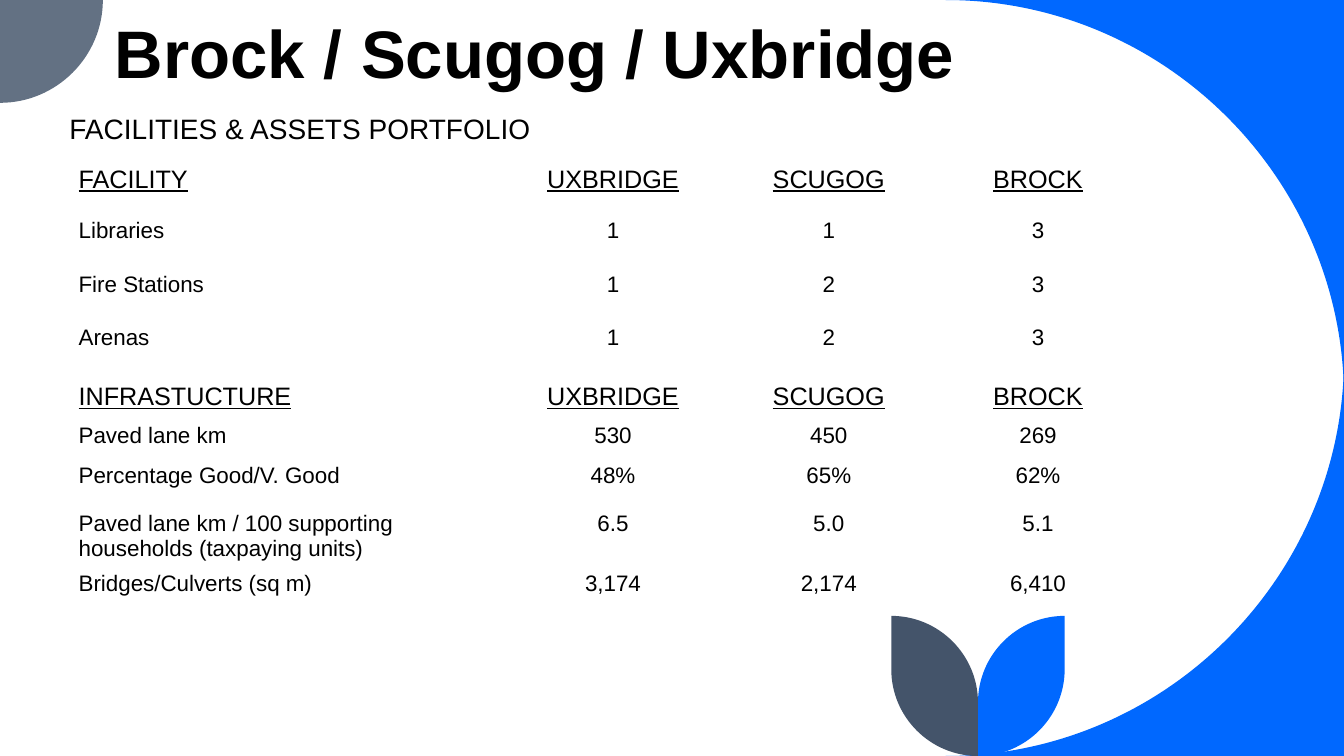
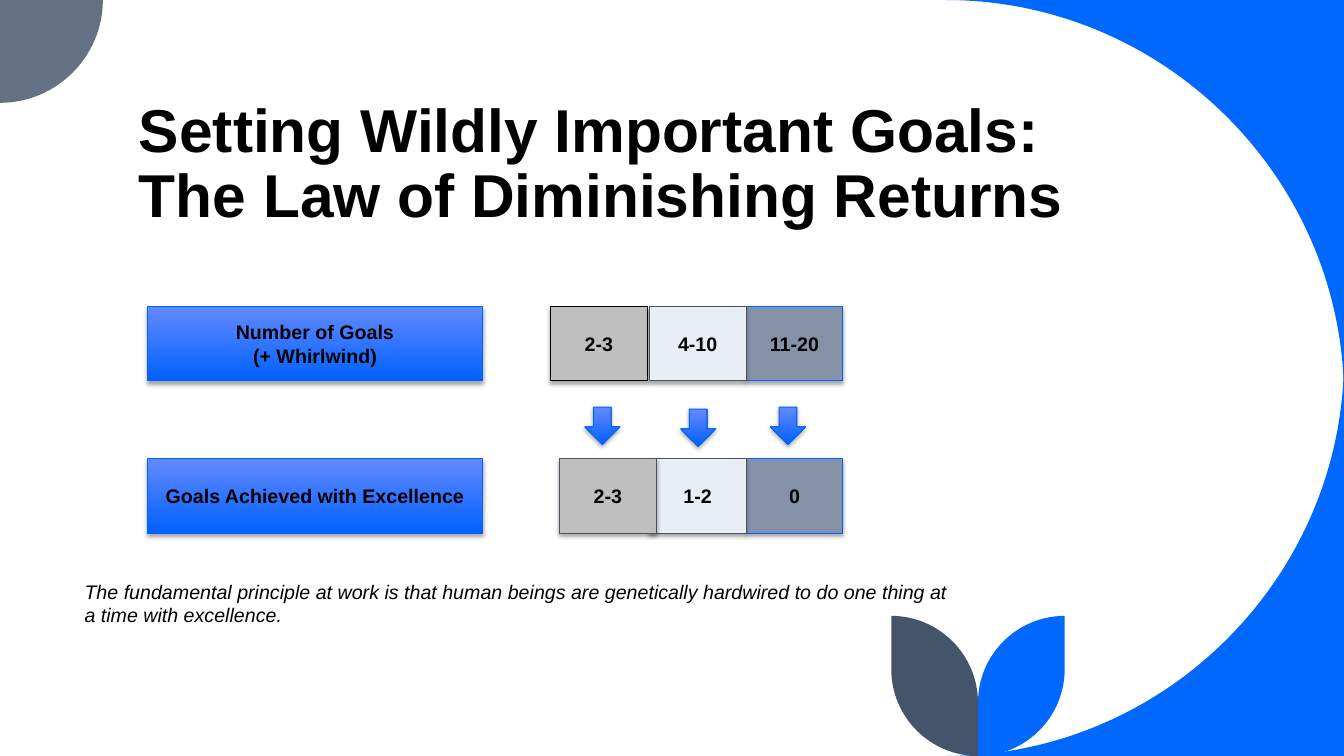
from dataclasses import dataclass

from lxml.etree import SubElement
from pptx import Presentation
from pptx.dml.color import RGBColor
from pptx.enum.shapes import MSO_SHAPE
from pptx.enum.text import MSO_ANCHOR, PP_ALIGN
from pptx.oxml.ns import qn
from pptx.util import Inches, Pt


@dataclass(frozen=True)
class Theme:
    font: str = "Arial"
    text: str = "000000"
    blue: str = "0068FF"
    slate: str = "637183"
    navy: str = "44546A"
    gradient: tuple = ("0060FF", "638AFF")
    outline: str = "0063FF"
    light_outline: str = "4A5462"
    silver: str = "BFBFBF"
    mist: str = "E8EEF4"
    steel: str = "8491A7"
    title_size: float = 48
    long_title_size: float = 43.2
    subtitle_size: float = 20
    header_size: float = 18
    cell_size: float = 16
    label_size: float = 14


THEME = Theme()
WIDTH, HEIGHT = 13.33, 7.5
ROUNDNESS = 0.55


def color(value):
    return RGBColor.from_string(value)


def write_text(frame, text, *, size, bold=False, italic=False, underline=False,
               align=PP_ALIGN.LEFT, anchor=MSO_ANCHOR.TOP, spacing=None):
    frame.word_wrap = True
    frame.vertical_anchor = anchor
    for index, line in enumerate(text.split("\n")):
        paragraph = frame.paragraphs[0] if index == 0 else frame.add_paragraph()
        paragraph.text = line
        paragraph.alignment = align
        paragraph.line_spacing = spacing
        for run in paragraph.runs:
            font = run.font
            font.name, font.size = THEME.font, Pt(size)
            font.bold, font.italic, font.underline = bold, italic, underline
            font.color.rgb = color(THEME.text)


def add_text(slide, box, text, **text_format):
    shape = slide.shapes.add_textbox(*map(Inches, box))
    write_text(shape.text_frame, text, **text_format)


def add_title(slide, box, text, size=THEME.title_size):
    add_text(slide, box, text, size=size, bold=True, anchor=MSO_ANCHOR.BOTTOM, spacing=0.9)


def quarter(start, corner, end):
    def toward_corner(point):
        return tuple(p + (c - p) * ROUNDNESS for p, c in zip(point, corner))
    return [start, toward_corner(start), toward_corner(end), end]


def add_outline(shapes, curves, fill, corner=None):
    points = sum(curves, []) + ([corner] if corner else [])
    points = [(Inches(x), Inches(y)) for x, y in points]
    builder = shapes.build_freeform(*points[0], scale=1.0)
    builder.add_line_segments(points[1:], close=True)
    shape = builder.convert_to_shape()
    bend_lines(shape, len(curves))
    shape.shadow.inherit = False
    shape.fill.solid()
    shape.fill.fore_color.rgb = color(fill)
    shape.line.fill.background()


def bend_lines(shape, curve_count):
    lines = list(shape._element.spPr.iter(qn("a:lnTo")))
    for index in range(curve_count):
        first, *others = lines[4 * index:4 * index + 3]
        first.tag = qn("a:cubicBezTo")
        for line in others:
            first.append(line[0])
            line.getparent().remove(line)


def add_leaves(slide, center, top, radius, height):
    group = slide.shapes.add_group_shape()
    bottom = top + height
    for side, fill in ((1, THEME.blue), (-1, THEME.navy)):
        outer = center + side * radius
        add_outline(group.shapes, [
            quarter((outer, bottom - radius), (outer, bottom), (center, bottom)),
            quarter((center, top + radius), (center, top), (outer, top)),
        ], fill)


def add_decoration(slide):
    radius, small = 3.95, 1.02
    left = WIDTH - radius
    for edge, inner in ((0, radius), (HEIGHT, HEIGHT - radius)):
        corner = (WIDTH, edge)
        curve = quarter((left, edge), corner, (WIDTH, inner))
        add_outline(slide.shapes, [curve], THEME.blue, corner)
    curve = quarter((small, 0), (small, small), (0, small))
    add_outline(slide.shapes, [curve], THEME.slate, (0, 0))
    add_leaves(slide, 9.7, 6.11, 0.86, 1.39)


def add_figures(slide, left, top, heights, rows, margin_top=0, margin_bottom=0):
    columns = (4.26, 2.28, 2, 2.15)
    box = (left, top, sum(columns), sum(heights))
    table = slide.shapes.add_table(len(rows), len(columns), *map(Inches, box)).table
    table.first_row = table.horz_banding = False
    for column, width in zip(table.columns, columns):
        column.width = Inches(width)
    for row_index, (height, values) in enumerate(zip(heights, rows)):
        table.rows[row_index].height = Inches(height)
        header = row_index == 0
        for column_index, value in enumerate(values):
            cell = table.cell(row_index, column_index)
            cell.fill.background()
            cell.margin_top = Inches(margin_top)
            cell.margin_bottom = Inches(margin_bottom)
            write_text(cell.text_frame, value, underline=header,
                       size=THEME.header_size if header else THEME.cell_size,
                       align=PP_ALIGN.CENTER if column_index else PP_ALIGN.LEFT)


def add_block(slide, kind, box, fill=None, line=THEME.outline, text=""):
    shape = slide.shapes.add_shape(kind, *map(Inches, box))
    if fill:
        shape.fill.solid()
        shape.fill.fore_color.rgb = color(fill)
    else:
        shape.fill.gradient()
        shape.fill.gradient_angle = 90
        for stop, value in zip(shape.fill.gradient_stops, THEME.gradient):
            stop.color.rgb = color(value)
    shape.line.color.rgb = color(line)
    shape.line.width = Pt(0.75)
    add_shadow(shape)
    if text:
        write_text(shape.text_frame, text, size=THEME.label_size, bold=True,
                   align=PP_ALIGN.CENTER, anchor=MSO_ANCHOR.MIDDLE)


def add_shadow(shape):
    shape.shadow.inherit = False
    effects = shape._element.spPr.find(qn("a:effectLst"))
    shadow = SubElement(effects, qn("a:outerShdw"), blurRad=str(Pt(3.1)),
                        dist=str(Pt(1.8)), dir="5400000", rotWithShape="0")
    tone = SubElement(shadow, qn("a:srgbClr"), val="000000")
    SubElement(tone, qn("a:alpha"), val="35000")


def add_goal_row(slide, left, top, label, cells):
    height = 0.74
    add_block(slide, MSO_SHAPE.RECTANGLE, (left, top, 3.33, height), text=label)
    for offset, text, fill, line in cells:
        box = (left + offset, top, 0.96, height)
        add_block(slide, MSO_SHAPE.RECTANGLE, box, fill, line, text)


def add_goal_diagram(slide, left, top):
    add_goal_row(slide, left, top, "Number of Goals\n(+ Whirlwind)", [
        (4, "2-3", THEME.silver, THEME.text),
        (5.94, "11-20", THEME.steel, THEME.outline),
        (4.98, "4-10", THEME.mist, THEME.light_outline),
    ])
    add_goal_row(slide, left, top + 1.51, "Goals Achieved with Excellence", [
        (5.94, "0", THEME.steel, THEME.outline),
        (4.98, "1-2", THEME.mist, THEME.light_outline),
        (4.09, "2-3", THEME.silver, THEME.light_outline),
    ])
    for across, down in ((4.34, 1), (5.29, 1.02), (6.18, 1)):
        add_block(slide, MSO_SHAPE.DOWN_ARROW, (left + across, top + down, 0.35, 0.37))


def add_slide(presentation):
    slide = presentation.slides.add_slide(presentation.slide_layouts[6])
    add_decoration(slide)
    return slide


def build_portfolio(presentation):
    slide = add_slide(presentation)
    add_title(slide, (1.04, 0.07, 10.69, 0.9), "Brock / Scugog / Uxbridge")
    add_text(slide, (0.59, 1.09, 10.2, 0.55), "FACILITIES & ASSETS PORTFOLIO",
             size=THEME.subtitle_size, spacing=0.9)
    towns = ("UXBRIDGE", "SCUGOG", "BROCK")
    add_figures(slide, 0.68, 1.64, [0.53] * 4, [
        ("FACILITY", *towns),
        ("Libraries", "1", "1", "3"),
        ("Fire Stations", "1", "2", "3"),
        ("Arenas", "1", "2", "3"),
    ])
    add_figures(slide, 0.68, 3.75, (0.4, 0.4, 0.47, 0.47, 0.4), [
        ("INFRASTUCTURE", *towns),
        ("Paved lane km", "530", "450", "269"),
        ("Percentage Good/V. Good", "48%", "65%", "62%"),
        ("Paved lane km / 100 supporting households (taxpaying units)", "6.5", "5.0", "5.1"),
        ("Bridges/Culverts (sq m)", "3,174", "2,174", "6,410"),
    ], margin_top=0.05, margin_bottom=0.02)


def build_goals(presentation):
    slide = add_slide(presentation)
    add_title(slide, (1.28, 1.1, 9.75, 1.24),
              "Setting Wildly Important Goals:\vThe Law of Diminishing Returns",
              THEME.long_title_size)
    add_goal_diagram(slide, 1.46, 3.04)
    add_text(slide, (0.74, 5.7, 8.84, 0.57),
             "The fundamental principle at work is that human beings are genetically "
             "hardwired to do one thing at a time with excellence.",
             size=THEME.label_size, italic=True)


def main():
    presentation = Presentation()
    presentation.slide_width = Inches(WIDTH)
    presentation.slide_height = Inches(HEIGHT)
    build_portfolio(presentation)
    build_goals(presentation)
    presentation.save("out.pptx")


if __name__ == "__main__":
    main()
